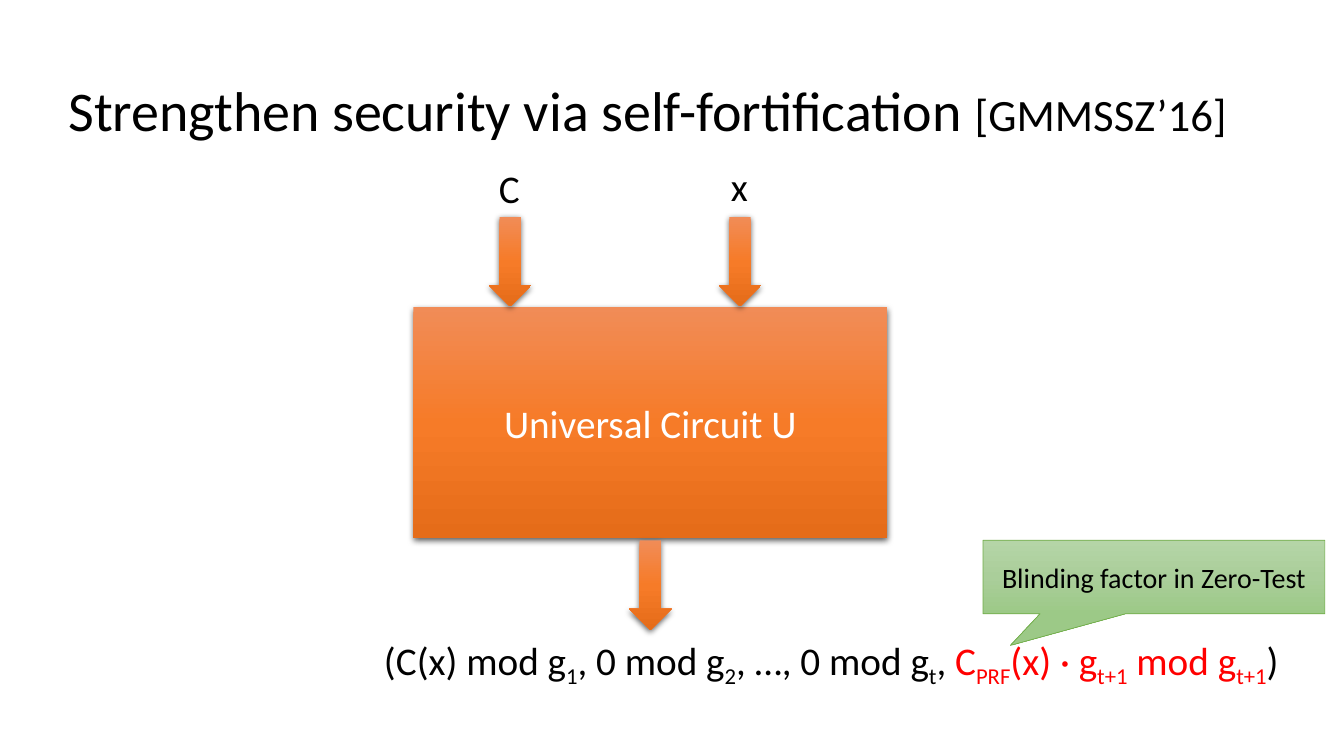
"""Build the self-fortification slide: a universal circuit with inputs and blinded output."""
from lxml.etree import SubElement
from pptx import Presentation
from pptx.dml.color import RGBColor
from pptx.enum.shapes import MSO_SHAPE
from pptx.enum.text import MSO_ANCHOR, MSO_AUTO_SIZE, PP_ALIGN
from pptx.oxml.ns import qn
from pptx.util import Inches, Pt

COLORS = {"black": "000000", "white": "FFFFFF", "red": "FF0000", "green": "70AD47"}
GRADIENTS = {
    "orange": ("F18C57", "F67B28", "E56C19"),
    "green": ("B5D5A7", "AACE9A", "9CC987"),
}


class SlideBuilder:
    font = "Calibri"

    def __init__(self, slide):
        self.s = slide

    def run(self, p, text, size, color="black", sub=False):
        r = p.add_run()
        r.text = text
        r.font.name = self.font
        r.font.size = Pt(size)
        r.font.color.rgb = RGBColor.from_string(COLORS[color])
        if sub:
            r._r.get_or_add_rPr().set("baseline", "-25000")

    def text(self, box, runs, wrap=False, anchor=MSO_ANCHOR.TOP, spacing=None):
        tf = self.s.shapes.add_textbox(*map(Inches, box)).text_frame
        tf.word_wrap = wrap
        tf.auto_size = MSO_AUTO_SIZE.NONE if wrap else MSO_AUTO_SIZE.SHAPE_TO_FIT_TEXT
        tf.vertical_anchor = anchor
        p = tf.paragraphs[0]
        if spacing:
            p.line_spacing = spacing
        for run in runs:
            self.run(p, *run)

    def gradient(self, sp, name):
        grad = SubElement(sp._element.spPr, qn("a:gradFill"), rotWithShape="1")
        stops = SubElement(grad, qn("a:gsLst"))
        for i, color in enumerate(GRADIENTS[name]):
            gs = SubElement(stops, qn("a:gs"), pos=str(i * 50000))
            SubElement(gs, qn("a:srgbClr"), val=color)
        SubElement(grad, qn("a:lin"), ang="5400000", scaled="0")

    def drop_shadow(self, sp):
        effects = sp._element.spPr.find(qn("a:effectLst"))
        shadow = SubElement(effects, qn("a:outerShdw"), blurRad=str(Pt(4.5)),
                            dist=str(Pt(1.5)), dir="5400000", algn="ctr", rotWithShape="0")
        color = SubElement(shadow, qn("a:srgbClr"), val=COLORS["black"])
        SubElement(color, qn("a:alpha"), val="63000")

    def shape(self, kind, box, fill, line=None, shadow=True, run=None):
        sp = self.s.shapes.add_shape(kind, *map(Inches, box))
        self.gradient(sp, fill)
        if line:
            sp.line.color.rgb = RGBColor.from_string(COLORS[line])
            sp.line.width = Pt(0.5)
        else:
            sp.line.fill.background()
        sp.shadow.inherit = False
        if shadow:
            self.drop_shadow(sp)
        if run:
            tf = sp.text_frame
            tf.word_wrap = True
            tf.vertical_anchor = MSO_ANCHOR.MIDDLE
            p = tf.paragraphs[0]
            p.alignment = PP_ALIGN.CENTER
            self.run(p, *run)
        return sp

    def arrow(self, left, top):
        self.shape(MSO_SHAPE.DOWN_ARROW, (left, top, 0.42, 0.89), "orange")


def main():
    prs = Presentation()
    prs.slide_width, prs.slide_height = Inches(13.33), Inches(7.5)
    b = SlideBuilder(prs.slides.add_slide(prs.slide_layouts[6]))

    b.text((0.58, 0.4, 11.75, 1.45),
           [("Strengthen security via self-fortification ", 40), ("[GMMSSZ’16]", 32)],
           wrap=True, anchor=MSO_ANCHOR.MIDDLE, spacing=0.9)

    b.shape(MSO_SHAPE.RECTANGLE, (4.1, 3.05, 4.7, 2.29), "orange",
            run=("Universal Circuit U", 28, "white"))
    for left, top in ((4.85, 2.15), (7.13, 2.15), (6.24, 5.36)):
        b.arrow(left, top)
    b.text((4.85, 1.58, 0.41, 0.57), [("C", 28)])
    b.text((7.15, 1.56, 0.37, 0.57), [("x", 28)])

    output = [
        ("(C(x) mod g", "black", False), ("1", "black", True),
        (", 0 mod g", "black", False), ("2", "black", True),
        (", …, 0 mod g", "black", False), ("t", "black", True),
        (", ", "black", False),
        ("C", "red", False), ("PRF", "red", True),
        ("(x) · g", "red", False), ("t+1", "red", True),
        (" mod g", "red", False), ("t+1", "red", True),
        (")", "black", False),
    ]
    b.text((3.71, 6.26, 9.29, 0.57), [(t, 28, color, sub) for t, color, sub in output])

    callout = b.shape(MSO_SHAPE.RECTANGULAR_CALLOUT, (9.75, 5.36, 3.39, 0.73), "green",
                      line="green", shadow=False, run=("Blinding factor in Zero-Test", 20))
    callout.adjustments[0] = -0.42
    callout.adjustments[1] = 0.93

    prs.save("out.pptx")


if __name__ == "__main__":
    main()
